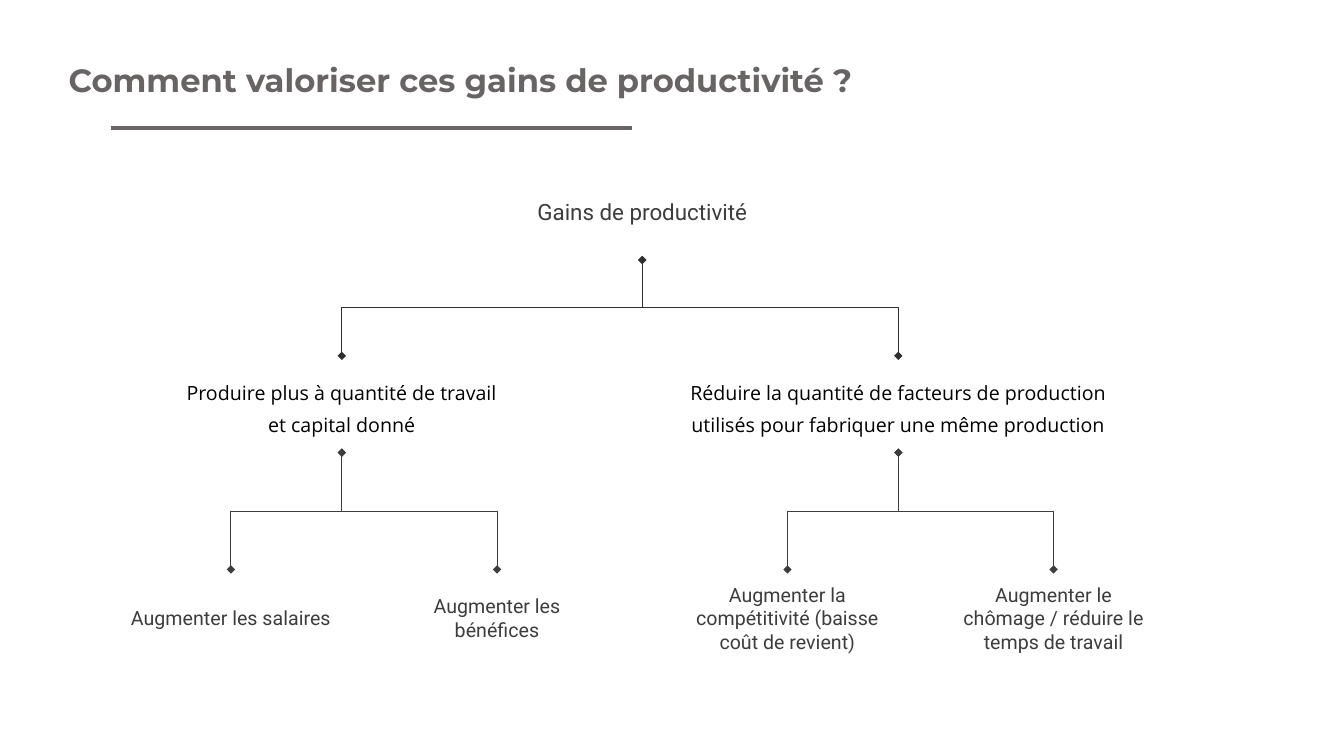
from pptx import Presentation
from pptx import util as u
from pptx.dml.color import RGBColor
from pptx.enum import shapes, text
from pptx.oxml.ns import qn
from lxml import etree

COLORS = {"title": "696464", "branch": "2F2F2F", "grey": "3D3D3D", "black": "000000"}
ROW_HEIGHT = 12.8  # height of a label, in percent of the slide


class TreeSlide:
    """Places elements in percent of the slide's width and height."""

    def __init__(self, deck):
        self.deck = deck
        self.page = deck.slides.add_slide(deck.slide_layouts[5])

    def x(self, share):
        return int(self.deck.slide_width * share / 100)

    def y(self, share):
        return int(self.deck.slide_height * share / 100)

    def add_span(self, para, words, font, size, color, bold=False):
        span = para.add_run()
        span.text = words
        span.font.name, span.font.size, span.font.bold = font, u.Pt(size), bold
        span.font.color.rgb = RGBColor.from_string(COLORS[color])

    def title(self, words, left, top, width, height):
        box = self.page.shapes.title
        box.left, box.top = self.x(left), self.y(top)
        box.width, box.height = self.x(width), self.y(height)
        frame = box.text_frame
        frame.auto_size = text.MSO_AUTO_SIZE.NONE
        frame.vertical_anchor = text.MSO_ANCHOR.MIDDLE
        frame.margin_top = u.Inches(0.15)
        para = frame.paragraphs[0]
        para.alignment = text.PP_ALIGN.LEFT
        para.line_spacing = 0.9
        self.add_span(para, words, "Montserrat", 23, "title", bold=True)

    def label(self, words, center, top, width, font="Roboto", size=14,
              color="grey", spacing=1.0):
        box = self.page.shapes.add_textbox(
            self.x(center - width / 2), self.y(top), self.x(width), self.y(ROW_HEIGHT))
        frame = box.text_frame
        frame.word_wrap = True
        frame.vertical_anchor = text.MSO_ANCHOR.MIDDLE
        frame.margin_left = frame.margin_right = u.Inches(0.13)
        frame.margin_top = frame.margin_bottom = u.Inches(0.13)
        para = frame.paragraphs[0]
        para.alignment = text.PP_ALIGN.CENTER
        para.line_spacing = spacing
        self.add_span(para, words, font, size, color)

    def connect(self, kind, ends, color, weight):
        line = self.page.shapes.add_connector(kind, *ends)
        line.line.color.rgb = RGBColor.from_string(COLORS[color])
        line.line.width = u.Pt(weight)
        etree.SubElement(line._element.spPr, qn("a:effectLst"))
        return line

    def rule(self, left, right, top, color, weight):
        ends = self.x(left), self.y(top), self.x(right), self.y(top)
        self.connect(shapes.MSO_CONNECTOR.STRAIGHT, ends, color, weight)

    def branch(self, parent, child, top, bottom, color):
        """Elbow from parent down to child: drawn lying, then turned by 270°."""
        middle_x = self.x((parent + child) / 2)
        middle_y = self.y((top + bottom) / 2)
        drop = self.y(bottom - top) // 2
        reach = self.x(abs(child - parent)) // 2
        if child < parent:
            drop = -drop
        ends = middle_x + drop, middle_y - reach, middle_x - drop, middle_y + reach
        line = self.connect(shapes.MSO_CONNECTOR.ELBOW, ends, color, 0.75)
        line._element.spPr.find(qn("a:xfrm")).set("rot", str(270 * 60000))
        outline = line._element.spPr.find(qn("a:ln"))
        for end in ("a:headEnd", "a:tailEnd"):
            etree.SubElement(outline, qn(end), type="diamond")


def main():
    deck = Presentation()
    deck.slide_width, deck.slide_height = u.Inches(13.33), u.Inches(7.5)
    slide = TreeSlide(deck)

    # Heading
    slide.title("Comment valoriser ces gains de productivité ?", 4.35, 5.47, 94.15, 9.47)
    slide.rule(8.25, 47.04, 16.93, "title", 2.25)

    # Tree: each strategy with its centre, width and two outcomes
    root, root_top, strategy_top, outcome_top = 47.79, 21.6, 47.07, 75.33
    strategies = [
        ("Produire plus à quantité de travail et capital donné", 25.43, 26.7,
         ["Augmenter les salaires", "Augmenter les bénéfices"]),
        ("Réduire la quantité de facteurs de production utilisés pour fabriquer "
         "une même production", 66.84, 34.36,
         ["Augmenter la compétitivité (baisse coût de revient)",
          "Augmenter le chômage / réduire le temps de travail"]),
    ]
    slide.label("Gains de productivité", root, root_top, 18, size=16)
    for strategy, center, width, outcomes in strategies:
        slide.branch(root, center, root_top + ROW_HEIGHT, strategy_top, "branch")
        slide.label(strategy, center, strategy_top, width, "Open Sans", 14, "black", 1.35)
        for outcome, shift in zip(outcomes, (-8.25, 11.55)):
            slide.branch(center, center + shift, strategy_top + ROW_HEIGHT,
                         outcome_top, "grey")
            slide.label(outcome, center + shift, outcome_top, 18)

    deck.save("out.pptx")


if __name__ == "__main__":
    main()
